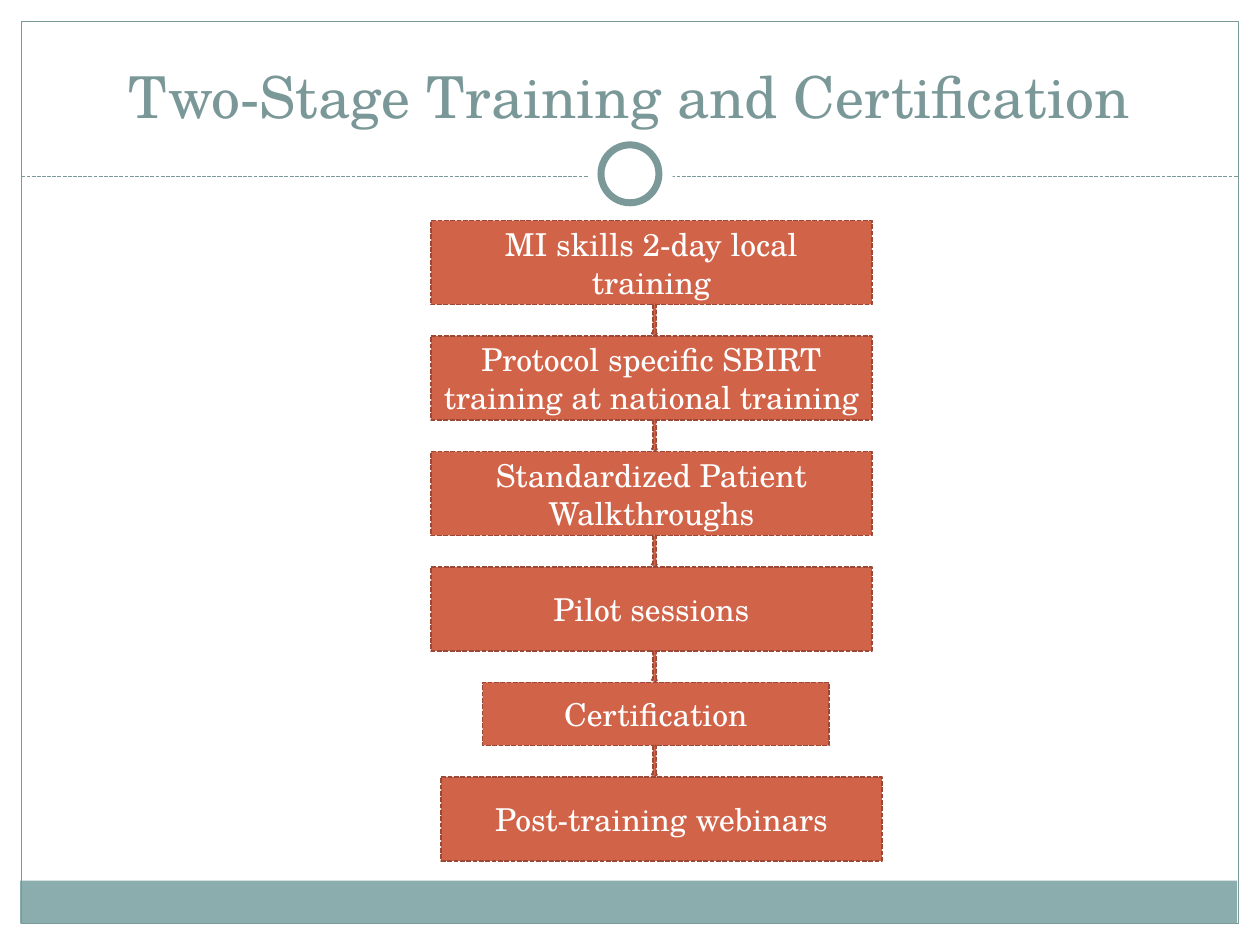
from pptx import Presentation, util as u
from pptx.dml.color import RGBColor
from pptx.enum import dml, shapes, text

HUES = {"white": "FFFFFF", "teal": "7C999A", "title": "7B9899",
        "band": "8CADAE", "rust": "D16349", "edge": "9B4936"}
FONT = "TeX Gyre Schola"
KIND = shapes.MSO_SHAPE
STEPS = [("MI skills 2-day local training", 3.42, 3.5, 2 / 3),
         ("Protocol specific SBIRT training at national training", 3.42, 3.5, 2 / 3),
         ("Standardized Patient Walkthroughs", 3.42, 3.5, 2 / 3),
         ("Pilot sessions", 3.42, 3.5, 2 / 3),
         ("Certification", 3.83, 2.75, 0.5),
         ("Post-training webinars", 3.5, 3.5, 2 / 3)]
TOP, GAP = 1.75, 0.25


def hue(name):
    return RGBColor.from_string(HUES[name])


def write(frame, words, size=18, color="white", anchor=text.MSO_ANCHOR.MIDDLE):
    frame.word_wrap = True
    frame.auto_size = text.MSO_AUTO_SIZE.NONE
    frame.vertical_anchor = anchor
    para = frame.paragraphs[0]
    para.alignment = text.PP_ALIGN.CENTER
    run = para.add_run()
    run.text = words
    run.font.name = FONT
    run.font.size = u.Pt(size)
    run.font.color.rgb = hue(color)


class Deck:
    """Draws styled elements on the current slide."""

    def __init__(self):
        self.show = Presentation()
        self.show.slide_width, self.show.slide_height = u.Inches(10), u.Inches(7.5)
        self.slide = self.show.slides.add_slide(self.show.slide_layouts[5])

    def title(self, words, *box):
        item = self.slide.shapes.title
        item.left, item.top, item.width, item.height = map(u.Inches, box)
        write(item.text_frame, words, size=33, color="title",
              anchor=text.MSO_ANCHOR.BOTTOM)

    def stroke(self, line, color, width, dash):
        line.color.rgb = hue(color)
        line.width = u.Pt(width)
        if dash:
            line.dash_style = dml.MSO_LINE.SQUARE_DOT

    def shape(self, kind, *box, fill=None, line=None, width=0.75, dash=False):
        item = self.slide.shapes.add_shape(kind, *map(u.Inches, box))
        item.shadow.inherit = False
        if fill:
            item.fill.solid()
            item.fill.fore_color.rgb = hue(fill)
        else:
            item.fill.background()
        if line:
            self.stroke(item.line, line, width, dash)
        else:
            item.line.fill.background()
        return item

    def rule(self, *ends):
        item = self.slide.shapes.add_connector(
            shapes.MSO_CONNECTOR.STRAIGHT, *map(u.Inches, ends))
        self.stroke(item.line, "teal", 0.75, True)
        props = item._element.spPr
        props.append(props.makeelement(
            "{http://schemas.openxmlformats.org/drawingml/2006/main}effectLst", {}))

    def step(self, kind, *box):
        return self.shape(kind, *box, fill="rust", line="edge", width=0.9, dash=True)


def main():
    deck = Deck()
    deck.title("Two-Stage Training and Certification", 0.33, 0.25, 9.33, 0.83)
    deck.shape(KIND.RECTANGLE, 0.16, 6.99, 9.66, 0.34, fill="band")
    deck.shape(KIND.RECTANGLE, 0.17, 0.17, 9.66, 7.16, line="teal")
    deck.rule(0.17, 1.4, 9.83, 1.4)
    deck.shape(KIND.OVAL, 4.67, 1.05, 0.67, 0.67, fill="white")
    deck.shape(KIND.OVAL, 4.77, 1.15, 0.46, 0.46, fill="white", line="teal", width=4)

    top = TOP
    for i, (words, left, width, height) in enumerate(STEPS):
        if i:
            deck.step(KIND.DOWN_ARROW, 5.17, top - GAP, 0.05, GAP)
        box = deck.step(KIND.RECTANGLE, left, top, width, height)
        write(box.text_frame, words)
        top += height + GAP
    deck.show.save("out.pptx")


if __name__ == "__main__":
    main()
